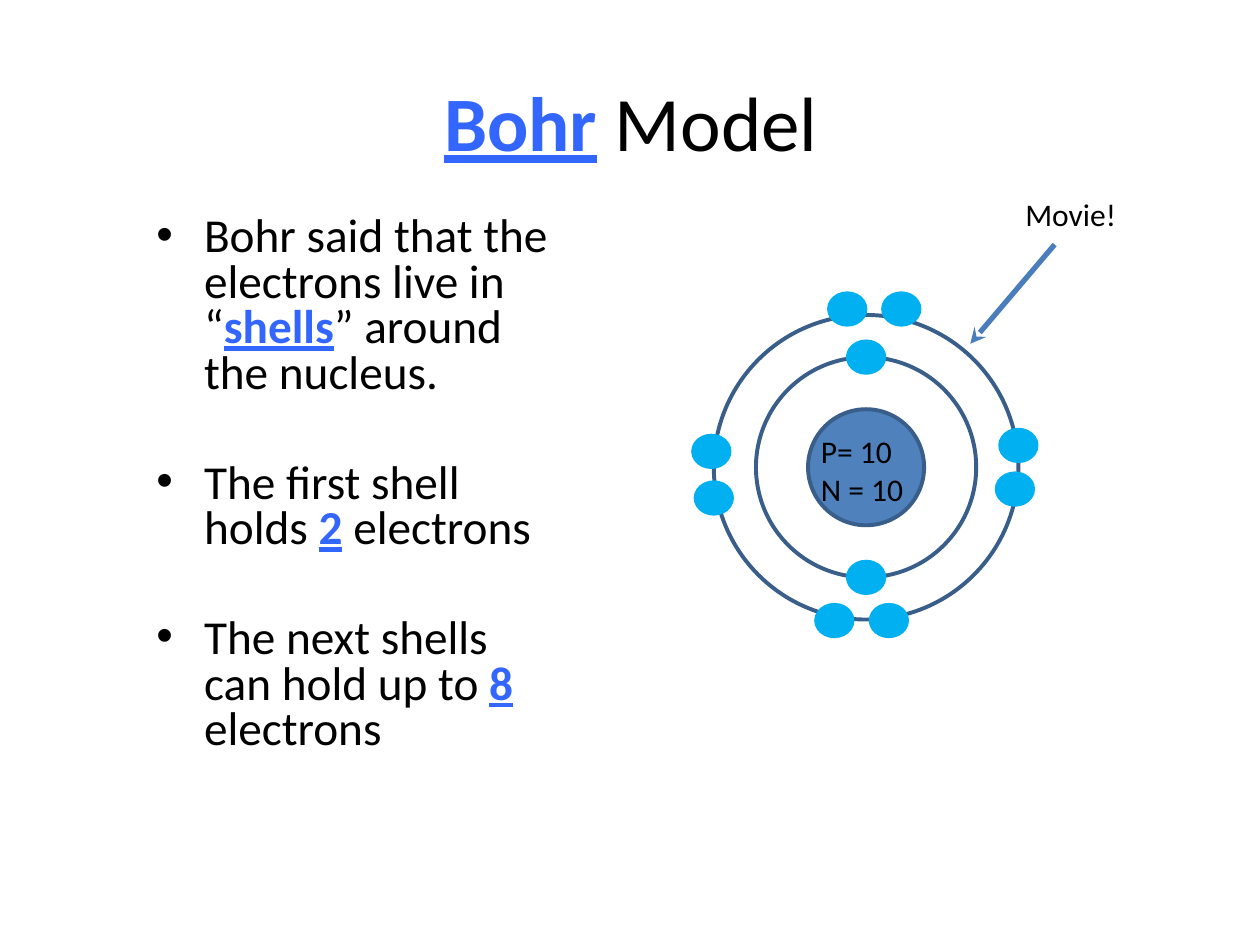
from typing import NamedTuple

from lxml import etree
from pptx import Presentation
from pptx import util as u
from pptx.dml.color import RGBColor
from pptx.enum import shapes, text
from pptx.oxml import ns

BLACK = RGBColor(0x00, 0x00, 0x00)
KEYWORD_BLUE = RGBColor(0x33, 0x66, 0xFF)
SHELL_BLUE = RGBColor(0x39, 0x5E, 0x8A)
NUCLEUS_BLUE = RGBColor(0x4F, 0x81, 0xBD)
ELECTRON_BLUE = RGBColor(0x00, 0xB0, 0xF0)
ARROW_BLUE = RGBColor(0x4A, 0x7D, 0xBB)

# Centre of the atom, in cm
ATOM_X, ATOM_Y = 17.46, 9.42


class Disc(NamedTuple):
    """An ellipse of the atom; offsets from the atom's centre, all in cm."""
    dx: float
    dy: float
    width: float
    height: float
    line: RGBColor
    line_pt: float
    fill: RGBColor | None = None


def ring(radius: float, fill: RGBColor | None = None) -> Disc:
    return Disc(0, 0, 2 * radius, 2 * radius, SHELL_BLUE, 2.25, fill)


def electron(dx: float, dy: float) -> Disc:
    return Disc(dx, dy, 0.74, 0.64, ELECTRON_BLUE, 2, ELECTRON_BLUE)


def draw_disc(slide, disc: Disc) -> None:
    oval = slide.shapes.add_shape(
        shapes.MSO_SHAPE.OVAL,
        u.Cm(ATOM_X + disc.dx - disc.width / 2),
        u.Cm(ATOM_Y + disc.dy - disc.height / 2),
        u.Cm(disc.width), u.Cm(disc.height))
    oval.shadow.inherit = False
    if disc.fill is None:
        oval.fill.background()
    else:
        oval.fill.solid()
        oval.fill.fore_color.rgb = disc.fill
    oval.line.color.rgb = disc.line
    oval.line.width = u.Pt(disc.line_pt)


def write(frame, paragraphs: list[str], *, size: float, align=None,
          anchor=text.MSO_ANCHOR.TOP, line_spacing: float | None = None,
          gap_pt: float = 0, hanging_cm: float = 0) -> None:
    """Write paragraphs; the parts between asterisks are key words."""
    frame.word_wrap = True
    frame.auto_size = text.MSO_AUTO_SIZE.NONE
    frame.vertical_anchor = anchor
    for index, content in enumerate(paragraphs):
        paragraph = frame.paragraphs[0] if index == 0 else frame.add_paragraph()
        paragraph.alignment = align
        paragraph.line_spacing = line_spacing
        paragraph.space_before = u.Pt(gap_pt if index else 0)
        if hanging_cm:
            properties = paragraph._p.get_or_add_pPr()
            properties.set("marL", str(u.Cm(hanging_cm)))
            properties.set("indent", str(-u.Cm(hanging_cm)))
        for part, words in enumerate(content.split("*")):
            if not words:
                continue
            is_keyword = part % 2 == 1
            run = paragraph.add_run()
            run.text = words
            run.font.name = "Calibri"
            run.font.size = u.Pt(size)
            run.font.bold = run.font.underline = is_keyword
            run.font.color.rgb = KEYWORD_BLUE if is_keyword else BLACK


def place(shape, left: float, top: float, width: float, height: float) -> None:
    shape.left, shape.top = u.Cm(left), u.Cm(top)
    shape.width, shape.height = u.Cm(width), u.Cm(height)


def add_label(slide, lines: list[str], left: float, top: float,
              width: float, height: float) -> None:
    label = slide.shapes.add_textbox(
        u.Cm(left), u.Cm(top), u.Cm(width), u.Cm(height))
    write(label.text_frame, lines, size=18)


def add_arrow(slide, x1: float, y1: float, x2: float, y2: float) -> None:
    arrow = slide.shapes.add_connector(
        shapes.MSO_CONNECTOR.STRAIGHT, u.Cm(x1), u.Cm(y1), u.Cm(x2), u.Cm(y2))
    arrow.line.color.rgb = ARROW_BLUE
    arrow.line.width = u.Pt(3)
    etree.SubElement(arrow.line._get_or_add_ln(), ns.qn("a:tailEnd"), type="stealth")
    etree.SubElement(arrow._element.spPr, ns.qn("a:effectLst"))


def main() -> None:
    prs = Presentation()
    prs.slide_width, prs.slide_height = u.Cm(25.4), u.Cm(19.05)
    slide = prs.slides.add_slide(prs.slide_layouts[1])

    # Title and list
    title, body = slide.shapes.title, slide.placeholders[1]
    place(title, 2.97, 0.84, 19.5, 3.18)
    write(title.text_frame, ["*Bohr* Model"], size=44,
          align=text.PP_ALIGN.CENTER, anchor=text.MSO_ANCHOR.MIDDLE)
    place(body, 2.9, 4.24, 8.74, 11.96)
    write(body.text_frame, [
        "Bohr said that the electrons live in “*shells*” around the nucleus.",
        "The first shell holds *2* electrons",
        "The next shells can hold up to *8* electrons",
    ], size=27, line_spacing=0.8, gap_pt=37, hanging_cm=0.96)

    # Shells, nucleus and electrons
    inner, outer = 2.22, 3.07
    electrons = [
        (0, -inner), (0, inner),
        (-outer, 0.62), (outer, -0.44), (-3.12, -0.32), (3, 0.44),
        (-0.38, -3.19), (0.71, -3.19), (-0.64, 3.09), (0.46, 3.09),
    ]
    discs = [ring(inner), ring(outer), ring(1.17, NUCLEUS_BLUE)]
    discs += [electron(dx, dy) for dx, dy in electrons]
    for disc in discs:
        draw_disc(slide, disc)
    add_label(slide, ["P= 10", "N = 10"], 16.3, 8.58, 2.75, 1.8)

    # Movie pointer
    add_arrow(slide, 21.26, 4.93, 19.56, 6.93)
    add_label(slide, ["Movie!"], 20.42, 3.81, 2.87, 1.02)

    prs.save("out.pptx")


if __name__ == "__main__":
    main()
